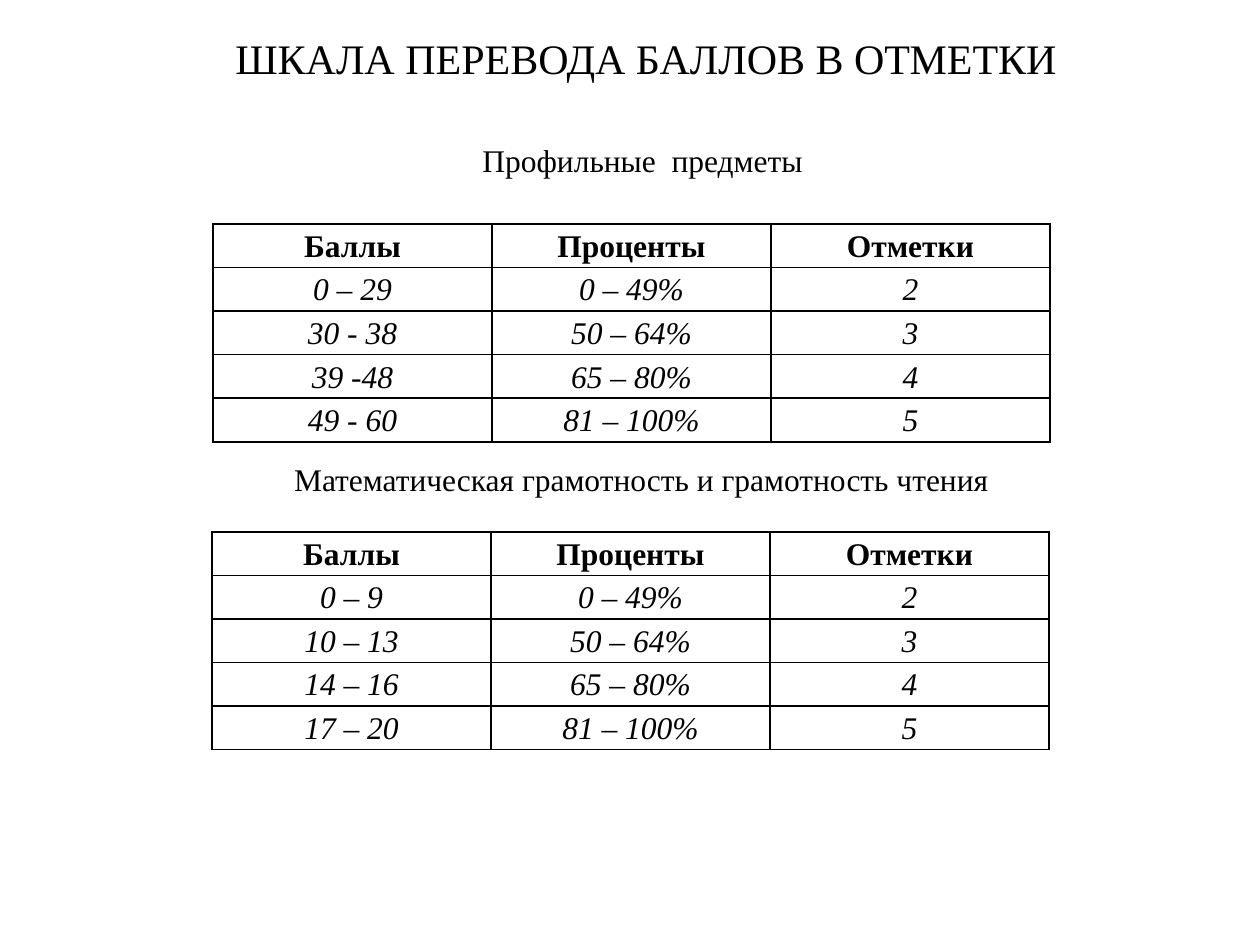
from dataclasses import dataclass

from lxml.etree import SubElement
from pptx import Presentation
from pptx.dml.color import RGBColor
from pptx.enum.text import MSO_AUTO_SIZE as AutoSize, PP_ALIGN as Align
from pptx.oxml.ns import qn
from pptx.util import Emu, Pt

PX_PER_INCH = 126


def px(length):
    return Emu(round(length * 914400 / PX_PER_INCH))


@dataclass(frozen=True)
class Theme:
    font: str = "Times New Roman"
    ink: RGBColor = RGBColor(0, 0, 0)
    paper: RGBColor = RGBColor(255, 255, 255)
    title_size: int = 24
    body_size: int = 18
    border_width: int = 1
    cell_spacing: float = 1.15


class SlideBuilder:
    def __init__(self, deck, theme):
        self.theme = theme
        self.page = deck.slides.add_slide(deck.slide_layouts[6])
        fill = self.page.background.fill
        fill.solid()
        fill.fore_color.rgb = theme.paper

    def style(self, para, size, bold=False, italic=False):
        for span in para.runs:
            font = span.font
            font.name, font.size = self.theme.font, Pt(size)
            font.bold, font.italic = bold, italic
            font.color.rgb = self.theme.ink

    def text(self, words, left, top, width, height, size, wrap=False, align=Align.LEFT):
        box = self.page.shapes.add_textbox(px(left), px(top), px(width), px(height))
        frame = box.text_frame
        frame.word_wrap = wrap
        frame.auto_size = AutoSize.SHAPE_TO_FIT_TEXT
        frame.text = words
        para = frame.paragraphs[0]
        para.alignment = align
        self.style(para, size)

    def border(self, cell):
        properties = cell._tc.get_or_add_tcPr()
        for index, side in enumerate(("lnL", "lnR", "lnT", "lnB")):
            line = properties.makeelement(qn(f"a:{side}"), w=str(Pt(self.theme.border_width)))
            fill = SubElement(line, qn("a:solidFill"))
            SubElement(fill, qn("a:srgbClr"), val=str(self.theme.ink))
            properties.insert(index, line)

    def table(self, rows, left, top, width, height):
        frame = self.page.shapes.add_table(
            len(rows), len(rows[0]), px(left), px(top), px(width), px(height))
        table = frame.table
        table.first_row = table.horz_banding = False
        for row_index, row in enumerate(rows):
            for column_index, words in enumerate(row):
                cell = table.cell(row_index, column_index)
                cell.margin_left = cell.margin_right = px(9)
                cell.margin_top = cell.margin_bottom = 0
                cell.fill.background()
                self.border(cell)
                cell.text_frame.text = words
                para = cell.text_frame.paragraphs[0]
                para.alignment = Align.CENTER
                para.line_spacing = self.theme.cell_spacing
                header = row_index == 0
                self.style(para, self.theme.body_size, bold=header, italic=not header)


HEADER = ("Баллы", "Проценты", "Отметки")
PERCENTS = ("0 – 49%", "50 – 64%", "65 – 80%", "81 – 100%")
MARKS = ("2", "3", "4", "5")
PROFILE_SCORES = ("0 – 29", "30 - 38", "39 -48", "49 - 60")
LITERACY_SCORES = ("0 – 9", "10 – 13", "14 – 16", "17 – 20")


def scale_rows(scores):
    return [HEADER, *zip(scores, PERCENTS, MARKS)]


def main():
    deck = Presentation()
    deck.slide_width, deck.slide_height = px(1260), px(945)
    theme = Theme()
    slide = SlideBuilder(deck, theme)

    # Title
    slide.text("ШКАЛА ПЕРЕВОДА БАЛЛОВ В ОТМЕТКИ", 223, 26, 856, 63, theme.title_size)

    # Profile subjects
    slide.text("Профильные  предметы", 470, 135, 378, 50, theme.body_size)
    slide.table(scale_rows(PROFILE_SCORES), 213, 224, 837, 218)

    # Mathematical and reading literacy
    slide.text("Математическая грамотность и грамотность чтения", 229, 454, 825, 50,
               theme.body_size, wrap=True, align=Align.CENTER)
    slide.table(scale_rows(LITERACY_SCORES), 212, 532, 837, 218)

    deck.save("out.pptx")


if __name__ == "__main__":
    main()
